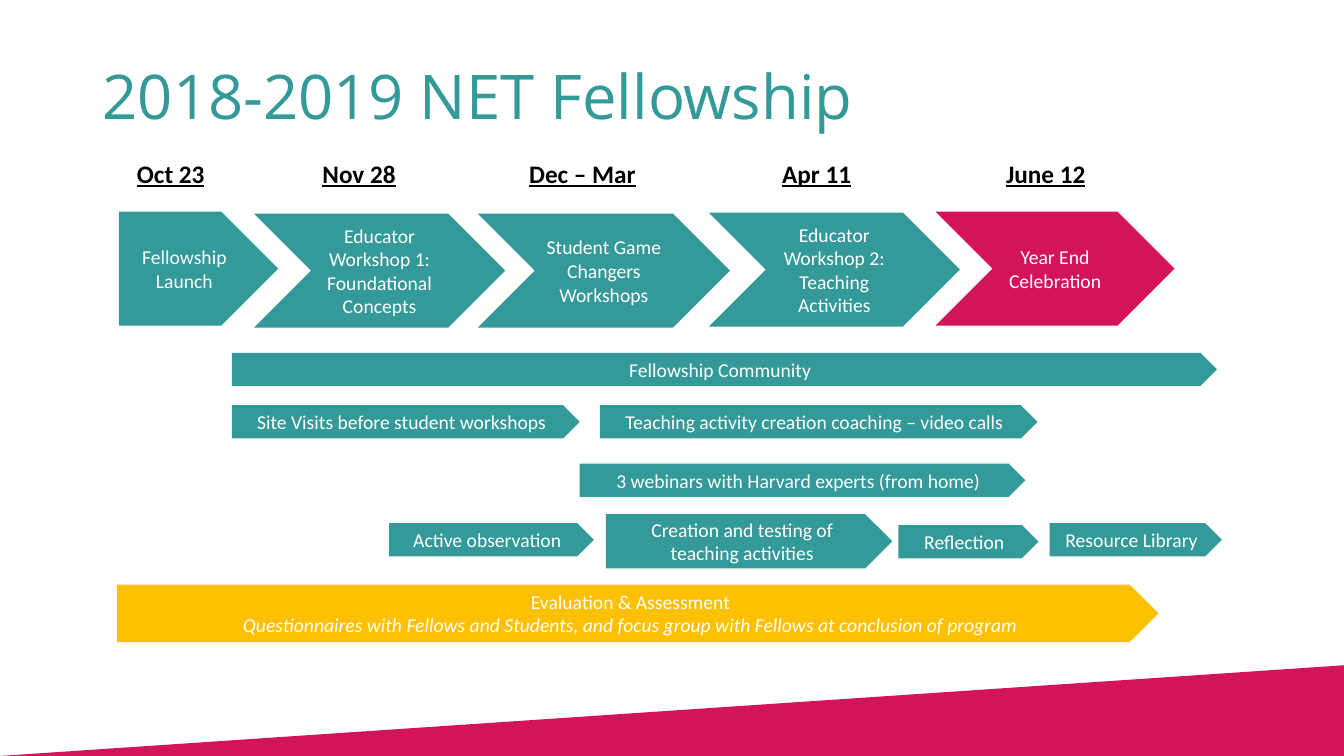
from collections import namedtuple
from dataclasses import dataclass

from lxml.etree import SubElement
from pptx import Presentation
from pptx.dml.color import RGBColor
from pptx.enum.shapes import MSO_SHAPE
from pptx.enum.text import MSO_ANCHOR, PP_ALIGN
from pptx.oxml.ns import qn
from pptx.util import Inches, Pt

Box = namedtuple("Box", "x y w h")


@dataclass(frozen=True)
class Theme:
    teal: str = "339999"
    pink: str = "D4145A"
    gold: str = "FFC000"
    white: str = "FFFFFF"
    black: str = "000000"
    head: str = "Open Sans"
    body: str = "Calibri"
    large: int = 44
    mid: int = 18
    small: int = 14


THEME = Theme()


def inset(box, x, y, w, h):
    return Box(box.x + x, box.y + y, w, h)


def add_run(para, text, size, color, face=THEME.body):
    run = para.add_run()
    run.text = text
    run.font.name = face
    run.font.size = Pt(size)
    run.font.color.rgb = RGBColor.from_string(color)
    return run


def add_form(slide, kind, box, color, adjust):
    form = slide.shapes.add_shape(kind, *map(Inches, box))
    form.shadow.inherit = False
    form.fill.solid()
    form.fill.fore_color.rgb = RGBColor.from_string(color)
    form.line.fill.background()
    form.adjustments[0] = adjust
    return form


def add_arrow(slide, box, lines, color=THEME.teal, kind=MSO_SHAPE.PENTAGON):
    frame = add_form(slide, kind, box, color, 0.5).text_frame
    frame.word_wrap = True
    frame.vertical_anchor = MSO_ANCHOR.MIDDLE
    for i, line in enumerate(lines):
        para = frame.add_paragraph() if i else frame.paragraphs[0]
        para.alignment = PP_ALIGN.CENTER
        run = add_run(para, line, THEME.small, THEME.white)
        if i:
            run.font.italic = True


def add_text(slide, box):
    frame = slide.shapes.add_textbox(*map(Inches, box)).text_frame
    frame.word_wrap = True
    return frame


def add_title(slide, box):
    frame = add_text(slide, box)
    frame.vertical_anchor = MSO_ANCHOR.MIDDLE
    para = frame.paragraphs[0]
    para.line_spacing = 0.9
    add_run(para, "2018-2019 NET Fellowship", THEME.large, THEME.teal, THEME.head)


def add_dates(slide, box):
    dates = (
        (0.17, "Oct 23"),
        (2.01, "Nov 28"),
        (4.06, "Dec – Mar"),
        (6.57, "Apr 11"),
        (8.79, "June 12"),
    )
    para = add_text(slide, box).paragraphs[0]
    tabs = SubElement(para._p.get_or_add_pPr(), qn("a:tabLst"))
    for stop, date in dates:
        SubElement(tabs, qn("a:tab"), pos=str(Inches(stop)), algn="l")
        add_run(para, "\t", THEME.mid, THEME.black)
        font = add_run(para, date, THEME.mid, THEME.black).font
        font.bold = True
        font.underline = True


def add_phases(slide, box):
    phases = (
        (0, 0, 1.58, "Fellowship Launch"),
        (1.34, 0.02, 2.49, "Educator Workshop 1: Foundational Concepts"),
        (3.56, 0.02, 2.5, "Student Game Changers Workshops"),
        (5.85, 0.01, 2.49, "Educator Workshop 2: Teaching Activities"),
        (8.1, 0, 2.37, "Year End Celebration"),
    )
    last = len(phases) - 1
    for i, (x, y, w, text) in enumerate(phases):
        kind = MSO_SHAPE.CHEVRON if i else MSO_SHAPE.PENTAGON
        color = THEME.pink if i == last else THEME.teal
        add_arrow(slide, inset(box, x, y, w, box.h), [text], color, kind)


def add_tracks(slide, box):
    thin = 0.33
    tracks = (
        (0, 0, box.w, thin, "Fellowship Community"),
        (0, 0.52, 3.45, thin, "Site Visits before student workshops"),
        (3.65, 0.52, 4.34, thin, "Teaching activity creation coaching – video calls"),
        (3.45, 1.1, 4.42, thin, "3 webinars with Harvard experts (from home)"),
        (1.56, 1.69, 2.03, thin, "Active observation"),
        (3.71, 1.6, 2.84, 0.54, "Creation and testing of teaching activities"),
        (6.61, 1.71, 1.39, thin, "Reflection"),
        (8.11, 1.69, 1.71, thin, "Resource Library"),
    )
    for x, y, w, h, text in tracks:
        add_arrow(slide, inset(box, x, y, w, h), [text])


def add_review(slide, box):
    lines = (
        "Evaluation & Assessment",
        "Questionnaires with Fellows and Students, and focus group "
        "with Fellows at conclusion of program",
    )
    add_arrow(slide, box, lines, THEME.gold)


def main():
    deck = Presentation()
    deck.slide_width = Inches(13.33)
    deck.slide_height = Inches(7.5)
    slide = deck.slides.add_slide(deck.slide_layouts[6])
    add_form(slide, MSO_SHAPE.ISOSCELES_TRIANGLE, Box(0, 6.6, 13.33, 0.9), THEME.pink, 1)
    add_title(slide, Box(0.92, 0.26, 11.5, 1.45))
    add_dates(slide, Box(1.09, 1.52, 9.83, 0.4))
    add_phases(slide, Box(1.18, 2.1, 10.47, 1.13))
    add_tracks(slide, Box(2.3, 3.5, 9.77, 2.14))
    add_review(slide, Box(1.16, 5.8, 10.33, 0.57))
    deck.save("out.pptx")


if __name__ == "__main__":
    main()
